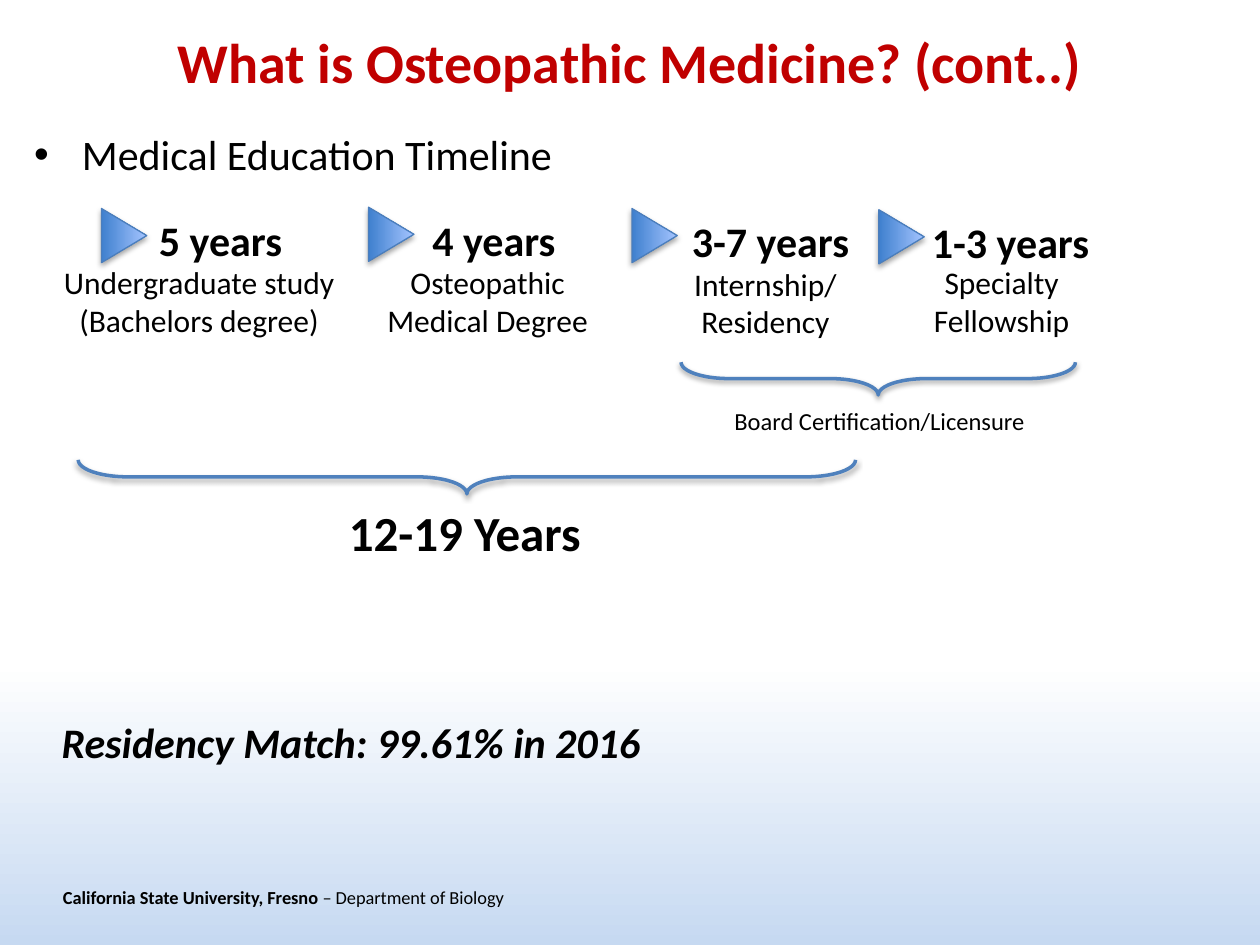
import pptx
import pptx.dml.color
import pptx.enum.shapes
import pptx.enum.text
import pptx.oxml
import pptx.oxml.ns
import pptx.util
from pptx.util import Inches

THEME = {
    "font": "Calibri", "title": "C00000", "text": "000000",
    "background": [(0.7, "FFFFFF"), (1, "C6D9F1")],
    "marker": [(0, "3F80CE"), (1, "A4C4FF")],
    "marker_line": "4B7EBC", "brace_line": "4F81BD",
    "title_size": 32, "total_size": 28, "heading_size": 24,
    "step_size": 18, "note_size": 14, "footer_size": 10.5,
}
MARKER_SIZE = (0.43, 0.36)
HEADING_HEIGHT, DETAIL_HEIGHT = 0.5, 0.71

TITLE = ("What is Osteopathic Medicine? (cont..)", (0, 0.17, 10, 0.64))
TOPIC = ("Medical Education Timeline", (0.17, 0.97, 9.67, 0.5))
STEPS = [
    {"marker": (0.77, 1.69), "years": ("5 years", 1.12, 1.65, 1.26),
     "detail": ("Undergraduate study (Bachelors degree)", 0.37, 2.04, 2.42)},
    {"marker": (2.89, 1.68), "years": ("4 years", 3.29, 1.65, 1.26),
     "detail": ("Osteopathic Medical Degree", 2.95, 2.04, 1.84)},
    {"marker": (4.98, 1.69), "years": ("3-7 years", 5.36, 1.66, 1.51),
     "detail": ("Internship/Residency", 5.37, 2.05, 1.41)},
    {"marker": (6.94, 1.7), "years": ("1-3 years", 7.25, 1.67, 1.54),
     "detail": ("Specialty Fellowship", 7.27, 2.04, 1.36)},
]
BRACES = [(6.84, 1.44, 0.26, 3.13), (3.57, 0.7, 0.27, 6.17)]
LICENSURE = ("Board Certification/Licensure", (5.73, 3.17, 2.53, 0.34))
TOTAL = ("12-19 Years", (2.67, 3.94, 2.07, 0.57))
MATCH = ("Residency Match: 99.61% in 2016", (0.39, 5.64, 5.92, 0.5))
FOOTER = [("California State University, Fresno ", True),
          ("– Department of Biology", False)]
FOOTER_BOX = (0.5, 6.92, 5.17, 0.4)


def color(value):
    return pptx.dml.color.RGBColor.from_string(value)


def place(shape, box):
    shape.left, shape.top, shape.width, shape.height = map(Inches, box)


def style(paragraph, size, ink=THEME["text"], bold=False, italic=False, centered=False):
    font = paragraph.font
    font.name, font.size = THEME["font"], pptx.util.Pt(size)
    font.color.rgb, font.bold, font.italic = color(ink), bold, italic
    align = pptx.enum.text.PP_ALIGN
    paragraph.alignment = align.CENTER if centered else align.LEFT


def fill_placeholder(shape, content, size, **look):
    text, box = content
    place(shape, box)
    shape.text_frame.text = text
    shape.text_frame.vertical_anchor = pptx.enum.text.MSO_ANCHOR.TOP
    paragraph = shape.text_frame.paragraphs[0]
    paragraph.space_before = 0
    style(paragraph, size, **look)
    return paragraph


def add_text(slide, text, box, size, wrap=True, **look):
    frame = slide.shapes.add_textbox(*map(Inches, box)).text_frame
    frame.word_wrap = wrap
    frame.text = text
    style(frame.paragraphs[0], size, **look)
    return frame


def apply_gradient(fill, stops, angle):
    fill.gradient()
    fill.gradient_angle = angle
    for stop, (position, value) in zip(fill.gradient_stops, stops):
        stop.position, stop.color.rgb = position, color(value)


def add_shadow(shape, opacity, distance):
    shape.shadow.inherit = False
    effects = shape._element.spPr.find(pptx.oxml.ns.qn("a:effectLst"))
    effects.append(pptx.oxml.parse_xml(
        f'<a:outerShdw {pptx.oxml.ns.nsdecls("a")} blurRad="{pptx.util.Pt(3.1)}" '
        f'dist="{pptx.util.Pt(distance)}" dir="5400000" rotWithShape="0">'
        f'<a:srgbClr val="000000"><a:alpha val="{opacity * 1000}"/></a:srgbClr>'
        '</a:outerShdw>'))


def add_turned_shape(slide, kind, box, line, width):
    shape = slide.shapes.add_shape(kind, *map(Inches, box))
    shape.rotation = 90
    shape.line.color.rgb, shape.line.width = color(line), pptx.util.Pt(width)
    return shape


def add_step(slide, step):
    kind = pptx.enum.shapes.MSO_SHAPE.ISOSCELES_TRIANGLE
    marker = add_turned_shape(slide, kind, step["marker"] + MARKER_SIZE,
                              THEME["marker_line"], 0.75)
    apply_gradient(marker.fill, THEME["marker"], 90)
    add_shadow(marker, 35, 1.8)
    text, *box = step["years"]
    add_text(slide, text, (*box, HEADING_HEIGHT), THEME["heading_size"],
             bold=True, centered=True)
    text, *box = step["detail"]
    add_text(slide, text, (*box, DETAIL_HEIGHT), THEME["step_size"], centered=True)


def add_brace(slide, box):
    kind = pptx.enum.shapes.MSO_SHAPE.RIGHT_BRACE
    brace = add_turned_shape(slide, kind, box, THEME["brace_line"], 2)
    brace.adjustments[0] = 1.468
    brace.fill.background()
    add_shadow(brace, 38, 1.6)


def add_footer(slide):
    frame = add_text(slide, "", FOOTER_BOX, THEME["footer_size"])
    frame.margin_left = frame.margin_right = 0
    frame.vertical_anchor = pptx.enum.text.MSO_ANCHOR.MIDDLE
    for text, bold in FOOTER:
        run = frame.paragraphs[0].add_run()
        run.text, run.font.bold = text, bold


def main():
    presentation = pptx.Presentation()
    presentation.slide_width, presentation.slide_height = Inches(10), Inches(7.5)
    slide = presentation.slides.add_slide(presentation.slide_layouts[1])
    apply_gradient(slide.background.fill, THEME["background"], 270)

    fill_placeholder(slide.shapes.title, TITLE, THEME["title_size"],
                     ink=THEME["title"], bold=True, centered=True)
    topic = fill_placeholder(slide.placeholders[1], TOPIC, THEME["heading_size"])
    properties = topic._p.get_or_add_pPr()
    properties.set("marL", str(Inches(0.38)))
    properties.set("indent", str(Inches(-0.38)))

    add_footer(slide)
    for step in STEPS:
        add_step(slide, step)
    for box in BRACES:
        add_brace(slide, box)
    add_text(slide, *LICENSURE, THEME["note_size"], wrap=False)
    add_text(slide, *TOTAL, THEME["total_size"], wrap=False, bold=True)
    add_text(slide, *MATCH, THEME["heading_size"], bold=True, italic=True)
    presentation.save("out.pptx")


if __name__ == "__main__":
    main()
